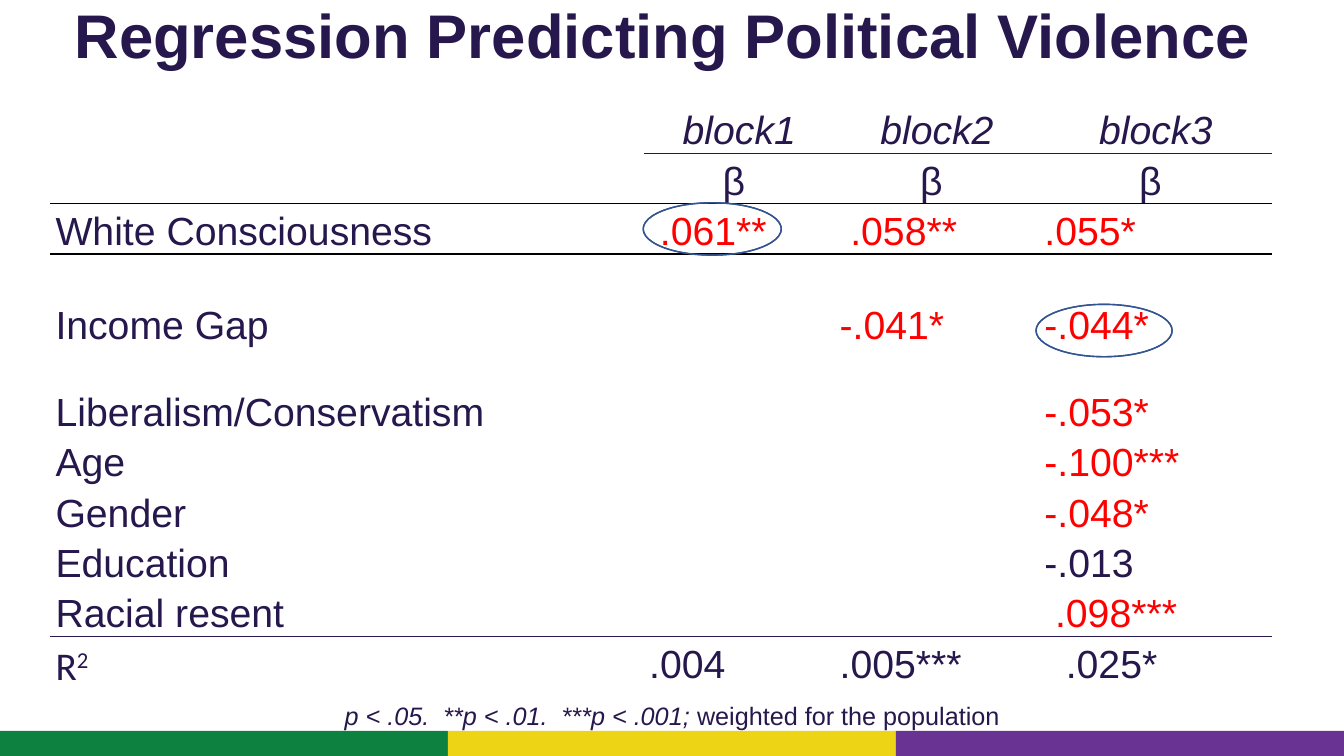
from lxml.etree import SubElement
from pptx import Presentation
from pptx.dml.color import RGBColor
from pptx.enum.shapes import MSO_SHAPE
from pptx.enum.text import MSO_ANCHOR, MSO_AUTO_SIZE, PP_ALIGN
from pptx.oxml.ns import qn
from pptx.util import Cm, Pt

COLORS = {
    "navy": "26174D", "red": "FF0000", "black": "000000", "green": "0D8240",
    "yellow": "EDD414", "purple": "693394", "blue": "4472C4", "outline": "325491",
}
PLAIN_TABLE_STYLE = "{2D5ABB26-0587-4C30-8999-92F81FD0307C}"
SPACE_WIDTH = 0.27  # one 28 pt space, used to indent some values

COLUMN_WIDTHS = [14.96, 4.8, 5.16, 5.87]
TALL, SHORT, LAST = 1.27, 1.09, 1.45
# Row height and cell texts
ROWS = [
    (TALL, ["", "block1", "block2", "block3"]),
    (TALL, ["", "β ", "β ", "β "]),
    (TALL, ["White Consciousness", ".061**", ".058**", ".055*"]),
    (SHORT, ["", "", "", ""]),
    (TALL, ["Income Gap", "", "-.041*", "-.044*"]),
    (SHORT, ["", "", "", ""]),
    (SHORT, ["Liberalism/Conservatism", "", "", "-.053*"]),
    (TALL, ["Age", "", "", "-.100***"]),
    (TALL, ["Gender", "", "", "-.048*"]),
    (TALL, ["Education", "", "", "-.013"]),
    (TALL, ["Racial resent", "", "", ".098***"]),
    (LAST, ["R", ".004", ".005***", ".025*"]),
]
LAST_ROW = len(ROWS) - 1
# (row, column): number of spaces of indent
INDENTS = {(2, 1): 1, (2, 2): 1, (10, 3): 1, (11, 3): 2}
# Row above the rule, first column, colour
RULES = [(0, 1, "navy"), (1, 0, "black"), (10, 0, "navy")]


def rgb(name):
    return RGBColor.from_string(COLORS[name])


def add_span(para, text, size=28, font="Arial", color="navy",
             bold=False, italic=False, superscript=False):
    span = para.add_run()
    span.text = text
    span.font.size = Pt(size)
    span.font.name = font
    span.font.color.rgb = rgb(color)
    span.font.bold = bold
    span.font.italic = italic
    if superscript:
        span.font._element.set("baseline", "30000")


def add_flat_shape(page, kind, left, top, width, height, fill, line=None):
    shape = page.shapes.add_shape(kind, Cm(left), Cm(top), Cm(width), Cm(height))
    shape.shadow.inherit = False
    shape.fill.solid()
    shape.fill.fore_color.rgb = rgb(fill)
    if line:
        shape.line.color.rgb = rgb(line)
        shape.line.width = Pt(1)
    else:
        shape.line.fill.background()
    return shape


def add_ring(page, left, top, width):
    ring = add_flat_shape(page, MSO_SHAPE.DONUT, left, top, width, 1.32, "blue", "outline")
    ring.adjustments[0] = 0


def add_border(cell, side, color):
    line = SubElement(cell._tc.get_or_add_tcPr(), qn("a:" + side), w=str(Pt(1)))
    fill = SubElement(line, qn("a:solidFill"))
    SubElement(fill, qn("a:srgbClr"), val=COLORS[color])


def fill_title(page):
    title = page.shapes.title
    title.left, title.top, title.width, title.height = Cm(0), Cm(-0.05), Cm(33.87), Cm(2.06)
    title.text_frame.vertical_anchor = MSO_ANCHOR.MIDDLE
    title.text_frame.auto_size = MSO_AUTO_SIZE.NONE
    para = title.text_frame.paragraphs[0]
    para.alignment = PP_ALIGN.CENTER
    para.line_spacing = 0.9
    add_span(para, "Regression Predicting Political Violence ", size=44, bold=True)


def fill_cell(cell, text, row, column):
    cell.margin_left = Cm(0.13 + SPACE_WIDTH * INDENTS.get((row, column), 0))
    cell.margin_right = Cm(0.13)
    cell.margin_top = cell.margin_bottom = 0
    cell.fill.background()
    if not text:
        return
    if row == 1:
        cell.vertical_anchor = MSO_ANCHOR.MIDDLE
    para = cell.text_frame.paragraphs[0]
    para.alignment = PP_ALIGN.CENTER if row < 2 else PP_ALIGN.LEFT
    para.line_spacing = 1.0 if row == 6 else 1.15
    significant = "*" in text and row != LAST_ROW
    is_square = text == "R"
    add_span(para, text, color="red" if significant else "navy", italic=row == 0,
             font="Calibri" if is_square else "Arial")
    if is_square:
        add_span(para, "2", font="Calibri", superscript=True)


def add_results_table(page):
    frame = page.shapes.add_table(len(ROWS), len(COLUMN_WIDTHS), Cm(1.27), Cm(2.59),
                                  Cm(sum(COLUMN_WIDTHS)), Cm(sum(row[0] for row in ROWS)))
    table = frame.table
    table.first_row = table.horz_banding = False
    table._tbl.tblPr.find(qn("a:tableStyleId")).text = PLAIN_TABLE_STYLE
    for column, width in zip(table.columns, COLUMN_WIDTHS):
        column.width = Cm(width)
    for row, first_column, color in RULES:
        for column in range(first_column, len(COLUMN_WIDTHS)):
            add_border(table.cell(row, column), "lnB", color)
            add_border(table.cell(row + 1, column), "lnT", color)
    for row, (height, texts) in enumerate(ROWS):
        table.rows[row].height = Cm(height)
        for column, text in enumerate(texts):
            fill_cell(table.cell(row, column), text, row, column)


def add_footnote(page):
    box = page.shapes.add_textbox(Cm(7.21), Cm(17.53), Cm(19.46), Cm(1.8))
    box.text_frame.word_wrap = True
    para = box.text_frame.paragraphs[0]
    para.alignment = PP_ALIGN.CENTER
    add_span(para, "p < .05.  **p < .01.  ***p < .001; ", size=18, italic=True)
    add_span(para, "weighted for the population", size=18)


def main():
    deck = Presentation()
    deck.slide_width, deck.slide_height = Cm(33.87), Cm(19.05)
    page = deck.slides.add_slide(deck.slide_layouts[5])

    # Colour band along the bottom
    band_width = 33.87 / 3
    for index, color in enumerate(["green", "yellow", "purple"]):
        add_flat_shape(page, MSO_SHAPE.RECTANGLE, index * band_width, 18.42,
                       band_width, 0.63, color)

    # Title, results and footnote
    fill_title(page)
    add_results_table(page)
    add_footnote(page)

    # Rings around the key coefficients
    add_ring(page, 16.21, 5.11, 3.48)
    add_ring(page, 26.11, 7.67, 3.43)

    deck.save("out.pptx")


if __name__ == "__main__":
    main()
